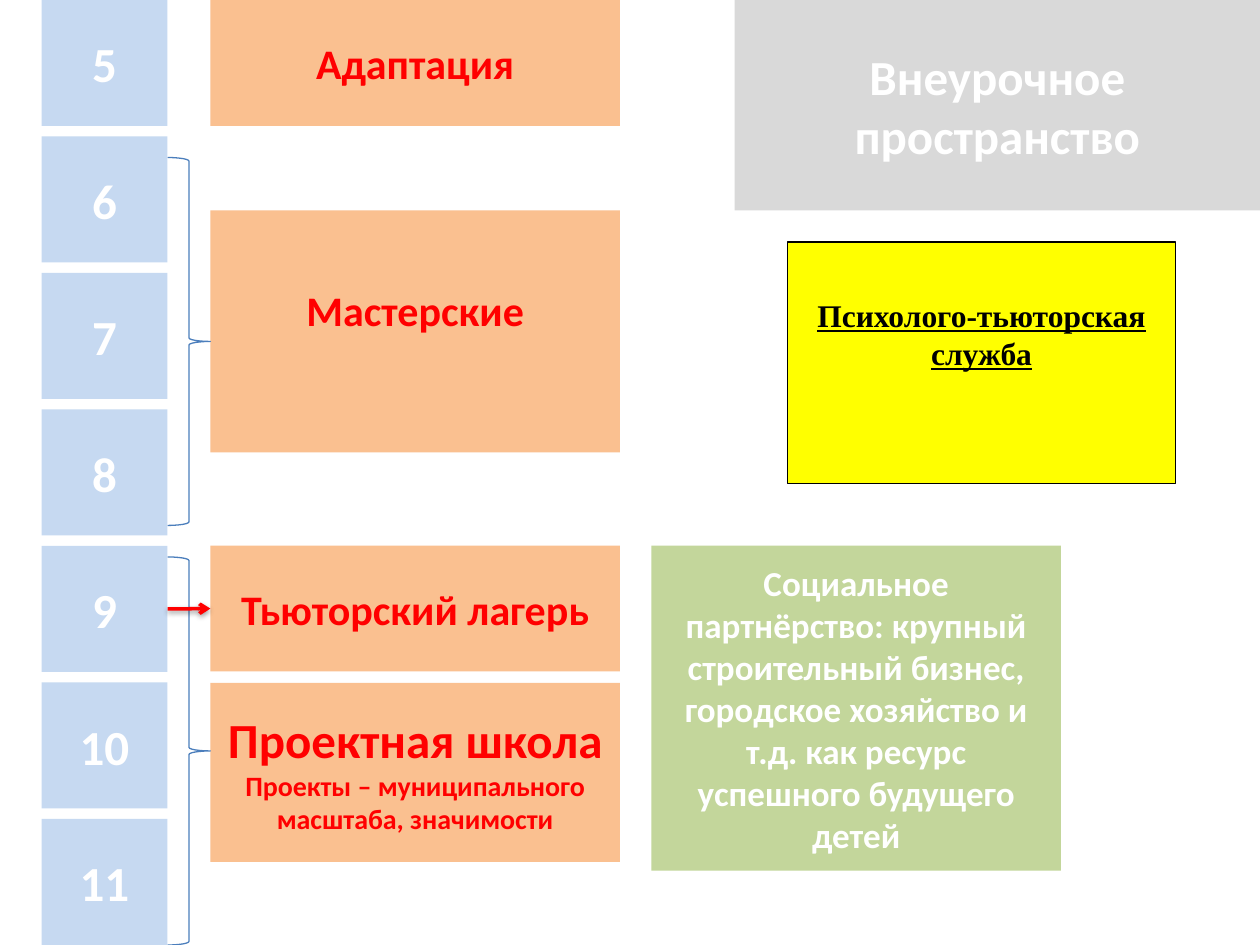
from lxml import etree
from pptx import Presentation
from pptx.dml.color import RGBColor
from pptx.enum import shapes, text
from pptx.oxml import ns
from pptx.util import Inches, Pt

# Content
GRADES = ["5", "6", "7", "8", "9", "10", "11"]
STAGE_LEFT, STAGE_WIDTH = 1.67, 3.25
ORANGE, RED, WHITE = "FAC090", "FF0000", "FFFFFF"

# Stages: top, height, bottom inset, runs as (text, size)
STAGES = {
    "adaptation": (0, 1, 0.05, [("Адаптация", 24)]),
    "workshops": (1.67, 1.92, 0.39, [("Мастерские", 24)]),
    "camp": (4.33, 1, 0.05, [("Тьюторский лагерь", 24)]),
    "projects": (5.42, 1.42, 0.05, [
        ("Проектная школа ", 28),
        ("Проекты – муниципального масштаба, значимости", 16)]),
}
PARTNERS = ("Социальное партнёрство: крупный строительный бизнес, городское "
            "хозяйство и т.д. как ресурс успешного будущего детей")
BRACES = [(1.25, 2.92), (4.42, 3.08)]  # top, height

# Grade column
GRADE_LEFT, GRADE_SIZE = 0.33, 1
GRADE_STEP = (7.5 - GRADE_SIZE) / (len(GRADES) - 1)
GRADE_RIGHT = GRADE_LEFT + GRADE_SIZE


def color(value):
    return RGBColor.from_string(value)


def add_box(slide, box, fill, runs, font_color=WHITE, font="Calibri"):
    shape = slide.shapes.add_shape(shapes.MSO_SHAPE.RECTANGLE, *map(Inches, box))
    shape.shadow.inherit = False
    shape.fill.solid()
    shape.fill.fore_color.rgb = color(fill)
    shape.line.fill.background()
    frame = shape.text_frame
    frame.word_wrap = True
    frame.vertical_anchor = text.MSO_ANCHOR.MIDDLE
    paragraph = frame.paragraphs[0]
    paragraph.alignment = text.PP_ALIGN.CENTER
    for content, size in runs:
        run = paragraph.add_run()
        run.text = content
        run.font.name = font
        run.font.size = Pt(size)
        run.font.bold = True
        run.font.color.rgb = color(font_color)
    return shape


def add_brace(slide, top, height):
    box = (GRADE_RIGHT, top, STAGE_LEFT - GRADE_RIGHT, height)
    brace = slide.shapes.add_shape(shapes.MSO_SHAPE.RIGHT_BRACE, *map(Inches, box))
    brace.shadow.inherit = False
    brace.fill.background()
    brace.line.color.rgb = color("4B7EBC")
    brace.line.width = Pt(0.75)


def add_arrow(slide, start, end):
    arrow = slide.shapes.add_connector(shapes.MSO_CONNECTOR.STRAIGHT, 0, 0, 0, 0)
    arrow.begin_connect(start, 3)
    arrow.end_connect(end, 1)
    arrow.line.color.rgb = color(RED)
    arrow.line.width = Pt(2)
    etree.SubElement(arrow.line._get_or_add_ln(), ns.qn("a:tailEnd"), type="arrow")
    # Soft shadow below the arrow
    effects = etree.SubElement(arrow._element.spPr, ns.qn("a:effectLst"))
    shadow = etree.SubElement(
        effects, ns.qn("a:outerShdw"), blurRad=str(Pt(3.1)), dist=str(Pt(1.6)),
        dir="5400000", rotWithShape="0")
    tint = etree.SubElement(shadow, ns.qn("a:srgbClr"), val="000000")
    etree.SubElement(tint, ns.qn("a:alpha"), val="38000")


def main():
    presentation = Presentation()
    presentation.slide_width = Inches(10)
    presentation.slide_height = Inches(7.5)
    slide = presentation.slides.add_slide(presentation.slide_layouts[6])

    # Grades
    grades = {}
    for index, grade in enumerate(GRADES):
        box = (GRADE_LEFT, index * GRADE_STEP, GRADE_SIZE, GRADE_SIZE)
        grades[grade] = add_box(slide, box, "C6D9F1", [(grade, 28)])

    # Stages and partners
    stages = {}
    for name, (top, height, inset, runs) in STAGES.items():
        box = (STAGE_LEFT, top, STAGE_WIDTH, height)
        stages[name] = add_box(slide, box, ORANGE, runs, RED)
        stages[name].text_frame.margin_bottom = Inches(inset)
    add_box(slide, (5.17, 4.33, STAGE_WIDTH, 2.58), "C3D69B", [(PARTNERS, 20)])

    # Links from grades to stages
    for top, height in BRACES:
        add_brace(slide, top, height)
    add_arrow(slide, grades["9"], stages["camp"])

    # Extracurricular space and support service
    add_box(slide, (5.83, 0, 4.17, 1.67), "D9D9D9", [("Внеурочное пространство", 28)])
    service = add_box(slide, (6.25, 1.92, 3.08, 1.92), "FFFF00",
                      [("Психолого-тьюторская служба", 18)],
                      "000000", "Times New Roman")
    service.line.color.rgb = color("000000")
    service.line.width = Pt(0.75)
    service.text_frame.vertical_anchor = text.MSO_ANCHOR.TOP
    service.text_frame.margin_top = Inches(0.43)
    service.text_frame.paragraphs[0].runs[0].font.underline = True

    presentation.save("out.pptx")


if __name__ == "__main__":
    main()
